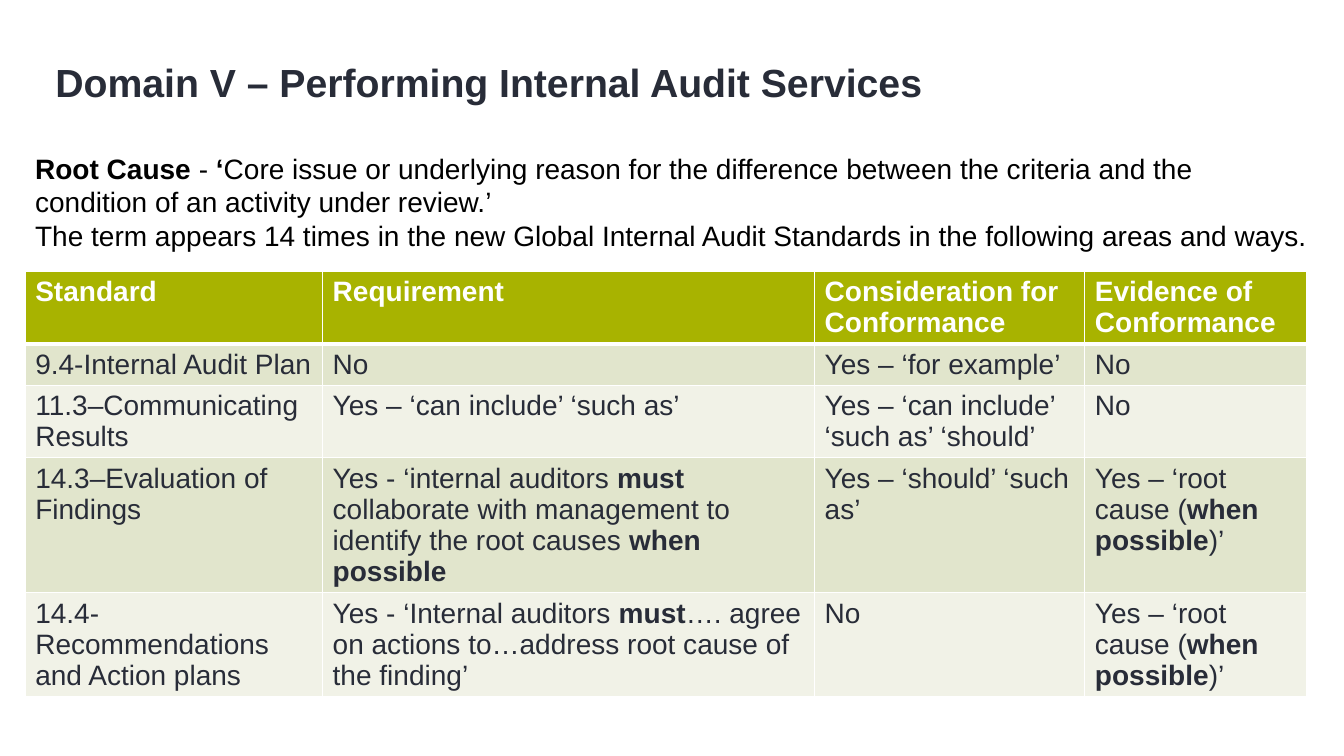
from lxml import etree
from pptx import Presentation
from pptx.dml.color import RGBColor
from pptx.enum.text import MSO_ANCHOR
from pptx.oxml.ns import qn
from pptx.util import Inches, Pt

BOTTOM = MSO_ANCHOR.BOTTOM
FONT = "Arial"
COLORS = {"ink": "282C38", "black": "000000", "white": "FFFFFF",
          "head": "A8B300", "odd": "E1E5CC", "even": "F1F2E7"}
SIDES = ("a:lnL", "a:lnR", "a:lnT", "a:lnB")
COLS = (2.95, 4.88, 2.68, 2.2)
ROW = 0.41

# Text between asterisks is bold.
TITLE = "Domain V – Performing Internal Audit Services"
INTRO = (
    "*Root Cause *- *‘*Core issue or underlying reason for the difference between "
    "the criteria and the condition of an activity under review.’",
    "The term appears 14 times in the new Global Internal Audit Standards "
    "in the following areas and ways.",
)
CAUSE = "Yes – ‘root cause (*when possible*)’"
ROWS = (
    ("*Standard*", "*Requirement*", "*Consideration for Conformance*",
     "*Evidence of Conformance*"),
    ("9.4-Internal Audit Plan", "No", "Yes – ‘for example’", "No"),
    ("11.3–Communicating Results", "Yes – ‘can include’ ‘such as’",
     "Yes – ‘can include’ ‘such as’ ‘should’", "No"),
    ("14.3–Evaluation of Findings",
     "Yes - ‘internal auditors *must* collaborate with management to identify "
     "the root causes *when possible*", "Yes – ‘should’ ‘such as’", CAUSE),
    ("14.4-Recommendations and Action plans",
     "Yes - ‘Internal auditors *must*…. agree on actions to…address root cause "
     "of the finding’", "No", CAUSE),
)


def color(name):
    return RGBColor.from_string(COLORS[name])


def write(para, text, size, tone):
    for i, part in enumerate(text.split("*")):
        if part:
            run = para.add_run()
            run.text = part
            run.font.bold = i % 2 == 1
    para.font.name = FONT
    para.font.size = Pt(size)
    para.font.color.rgb = color(tone)


def edge(cell, base):
    """Draw white cell borders; base is the width of the lower one."""
    props = cell._tc.get_or_add_tcPr()
    for i, side in enumerate(SIDES):
        width = base if side == "a:lnB" else 1
        line = etree.Element(qn(side), w=str(Pt(width)))
        fill = etree.SubElement(line, qn("a:solidFill"))
        etree.SubElement(fill, qn("a:srgbClr"), val=COLORS["white"])
        props.insert(i, line)


def add_title(slide, box):
    title = slide.shapes.title
    title.left, title.top, title.width, title.height = map(Inches, box)
    frame = title.text_frame
    frame.vertical_anchor = BOTTOM
    para = frame.paragraphs[0]
    para.alignment = 1
    write(para, f"*{TITLE}*", 28, "ink")


def add_intro(slide, box):
    frame = slide.shapes.add_textbox(*map(Inches, box)).text_frame
    frame.word_wrap = True
    for i, text in enumerate(INTRO):
        para = frame.add_paragraph() if i else frame.paragraphs[0]
        write(para, text, 20, "black")


def add_grid(slide, left, top):
    size = map(Inches, (left, top, sum(COLS), ROW * len(ROWS)))
    table = slide.shapes.add_table(len(ROWS), len(COLS), *size).table
    for col, width in zip(table.columns, COLS):
        col.width = Inches(width)
    for r, texts in enumerate(ROWS):
        shade = "head" if r == 0 else "odd" if r % 2 else "even"
        for c, text in enumerate(texts):
            cell = table.cell(r, c)
            cell.fill.solid()
            cell.fill.fore_color.rgb = color(shade)
            edge(cell, 1 if r else 3)
            write(cell.text_frame.paragraphs[0], text, 20, "ink" if r else "white")


def main():
    deck = Presentation()
    deck.slide_width, deck.slide_height = Inches(13.33), Inches(7.5)
    slide = deck.slides.add_slide(deck.slide_layouts[5])
    add_title(slide, (0.45, 0.49, 10.94, 0.61))
    add_grid(slide, 0.25, 2.69)
    add_intro(slide, (0.25, 1.45, 12.83, 1.11))
    deck.save("out.pptx")


if __name__ == "__main__":
    main()
